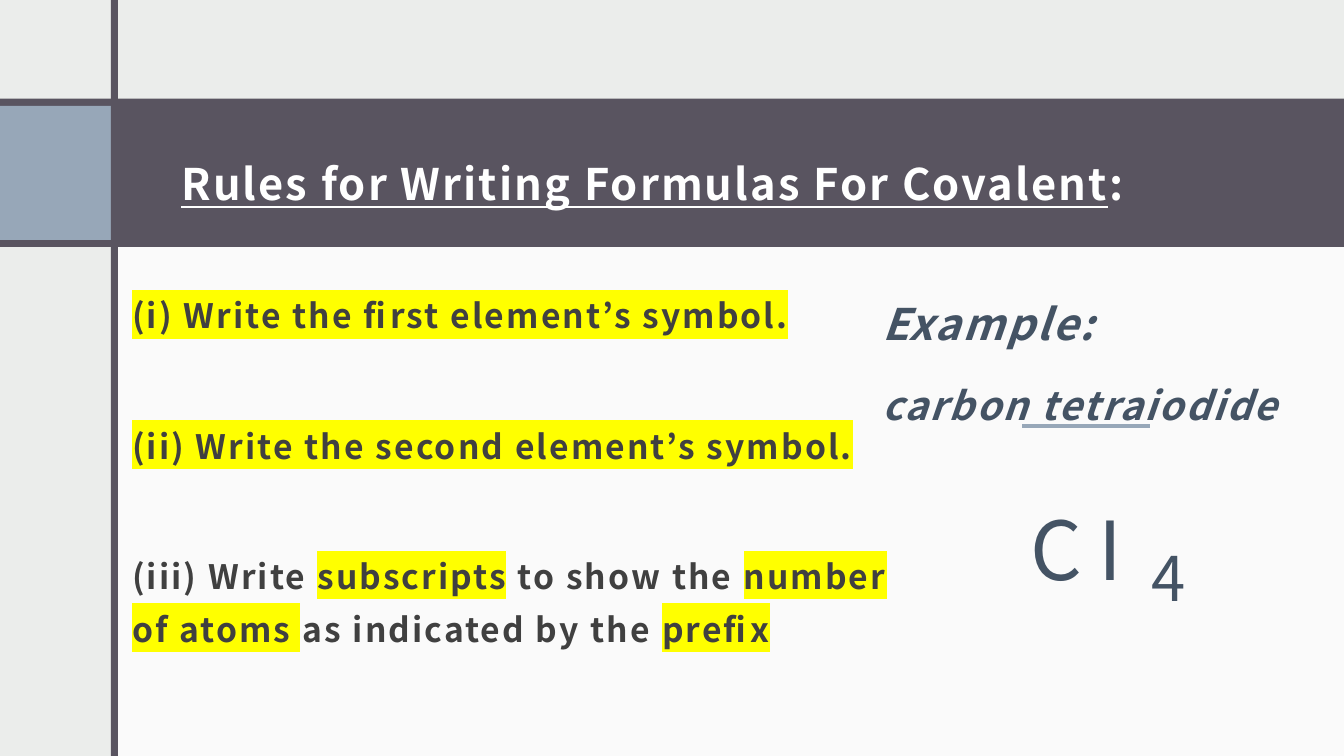
import pptx
import pptx.util
import pptx.dml.color
import pptx.enum.shapes
import pptx.enum.text
import lxml.etree
from dataclasses import dataclass

PX = 9144
DRAWING = "http://schemas.openxmlformats.org/drawingml/2006/main"


@dataclass(frozen=True)
class Theme:
    """Colours, font and type sizes of the deck."""
    font: str = "Noto Sans CJK JP"
    ground: str = "EBEDEB"
    panel: str = "FAFAFA"
    band: str = "595460"
    accent: str = "97A7B8"
    light: str = "FFFFFF"
    body: str = "404040"
    example: str = "445364"
    marker: str = "FFFF00"
    title_size: int = 31
    body_size: int = 24
    name_size: int = 28
    symbol_size: int = 58
    subscript_size: int = 44
    tracking: int = 150


THEME = Theme()


def rgb(colour):
    """Turn a hex string into a colour."""
    return pptx.dml.color.RGBColor.from_string(colour)


def add_block(page, box, colour):
    """Draw a plain filled rectangle."""
    block = page.shapes.add_shape(
        pptx.enum.shapes.MSO_SHAPE.RECTANGLE, *(side * PX for side in box))
    block.shadow.inherit = False
    block.fill.solid()
    block.fill.fore_color.rgb = rgb(colour)
    block.line.fill.background()


def add_frame(page, box, anchor=pptx.enum.text.MSO_ANCHOR.TOP):
    """Add an empty wrapping text box and return its frame."""
    frame = page.shapes.add_textbox(*(side * PX for side in box)).text_frame
    frame.word_wrap = True
    frame.vertical_anchor = anchor
    frame.margin_left = frame.margin_right = frame.margin_top = 12 * PX
    frame.margin_bottom = 10 * PX
    return frame


def add_para(frame, index, spacing, before=0):
    """Return a spaced paragraph, reusing the first one of the frame."""
    para = frame.add_paragraph() if index else frame.paragraphs[0]
    para.line_spacing = spacing
    para.space_before = pptx.util.Pt(before)
    return para


def add_span(para, text, size, colour, bold=False, italic=False,
             underline=False, marked=False):
    """Add one run of letter-spaced text."""
    span = para.add_run()
    span.text = text
    font = span.font
    font.name, font.size = THEME.font, pptx.util.Pt(size)
    font.bold, font.italic, font.underline = bold, italic, underline
    font.color.rgb = rgb(colour)
    props = span._r.get_or_add_rPr()
    props.set("spc", str(THEME.tracking))
    if marked:
        marker = lxml.etree.Element(f"{{{DRAWING}}}highlight")
        lxml.etree.SubElement(marker, f"{{{DRAWING}}}srgbClr", val=THEME.marker)
        props.find(f"{{{DRAWING}}}solidFill").addnext(marker)
    east_asian = lxml.etree.Element(f"{{{DRAWING}}}ea", typeface=THEME.font)
    props.find(f"{{{DRAWING}}}latin").addnext(east_asian)


def add_backdrop(page, box):
    """Lay out the panel, title band, side block and vertical bar."""
    left, top, width, height = box
    add_block(page, (left + 114, top + 233, width - 114, height - 233), THEME.panel)
    add_block(page, (left, top + 98, width, 147), THEME.band)
    add_block(page, (left, top + 105, 110, 133), THEME.accent)
    add_block(page, (left + 110, top, 7, height), THEME.band)


def add_title(page, box):
    """Write the underlined title with its plain colon."""
    frame = add_frame(page, box, pptx.enum.text.MSO_ANCHOR.MIDDLE)
    para = add_para(frame, 0, 1.4)
    for text, underline in (("Rules for Writing Formulas For Covalent", True), (":", False)):
        add_span(para, text, THEME.title_size, THEME.light, bold=True, underline=underline)


def add_rules(page, box):
    """Write the three rules with their highlighted words."""
    rules = (
        (("(i) Write the first element’s symbol.", True),),
        (("(ii) Write the second element’s symbol.", True),),
        (("(iii) Write ", False), ("subscripts", True), (" to show the ", False),
         ("number of atoms ", True), ("as indicated by the ", False), ("prefix", True)),
    )
    frame = add_frame(page, box)
    for index, rule in enumerate(rules):
        para = add_para(frame, index, 1.3, 55.7 if index else 9.3)
        for text, marked in rule:
            add_span(para, text, THEME.body_size, THEME.body, bold=True, marked=marked)


def add_example(page, box):
    """Write the example name, underline its prefix and show its formula."""
    left, top, width, _ = box
    frame = add_frame(page, (left, top, width, 229))
    lines = (("Example:", THEME.title_size), ("carbon tetraiodide", THEME.name_size))
    for index, (text, size) in enumerate(lines):
        add_span(add_para(frame, index, 1.4, 9.3), text, size, THEME.example,
                 bold=True, italic=True)
    symbols = (("C", 147, 183, 196, THEME.symbol_size),
               (" I", 194, 183, 196, THEME.symbol_size),
               ("4", 267, 232, 144, THEME.subscript_size))
    for text, right, down, height, size in symbols:
        frame = add_frame(page, (left + right, top + down, 97, height))
        add_span(add_para(frame, 0, 1.4, 9.3), text, size, THEME.example)
    start, end, level = left + 151, left + 278, top + 161
    rule = page.shapes.add_connector(
        pptx.enum.shapes.MSO_CONNECTOR.STRAIGHT,
        start * PX, level * PX, end * PX, level * PX)
    rule.line.color.rgb = rgb(THEME.accent)
    rule.line.width = pptx.util.Pt(3)
    lxml.etree.SubElement(rule._element.spPr, f"{{{DRAWING}}}effectLst")


def main():
    """Build the slide and save the deck."""
    deck = pptx.Presentation()
    deck.slide_width, deck.slide_height = 1333 * PX, 750 * PX
    page = deck.slides.add_slide(deck.slide_layouts[6])
    page.background.fill.solid()
    page.background.fill.fore_color.rgb = rgb(THEME.ground)
    add_backdrop(page, (0, 0, 1333, 750))
    add_title(page, (168, 114, 1095, 113))
    add_rules(page, (119, 269, 802, 438))
    add_example(page, (863, 262, 496, 229))
    deck.save("out.pptx")


if __name__ == "__main__":
    main()
